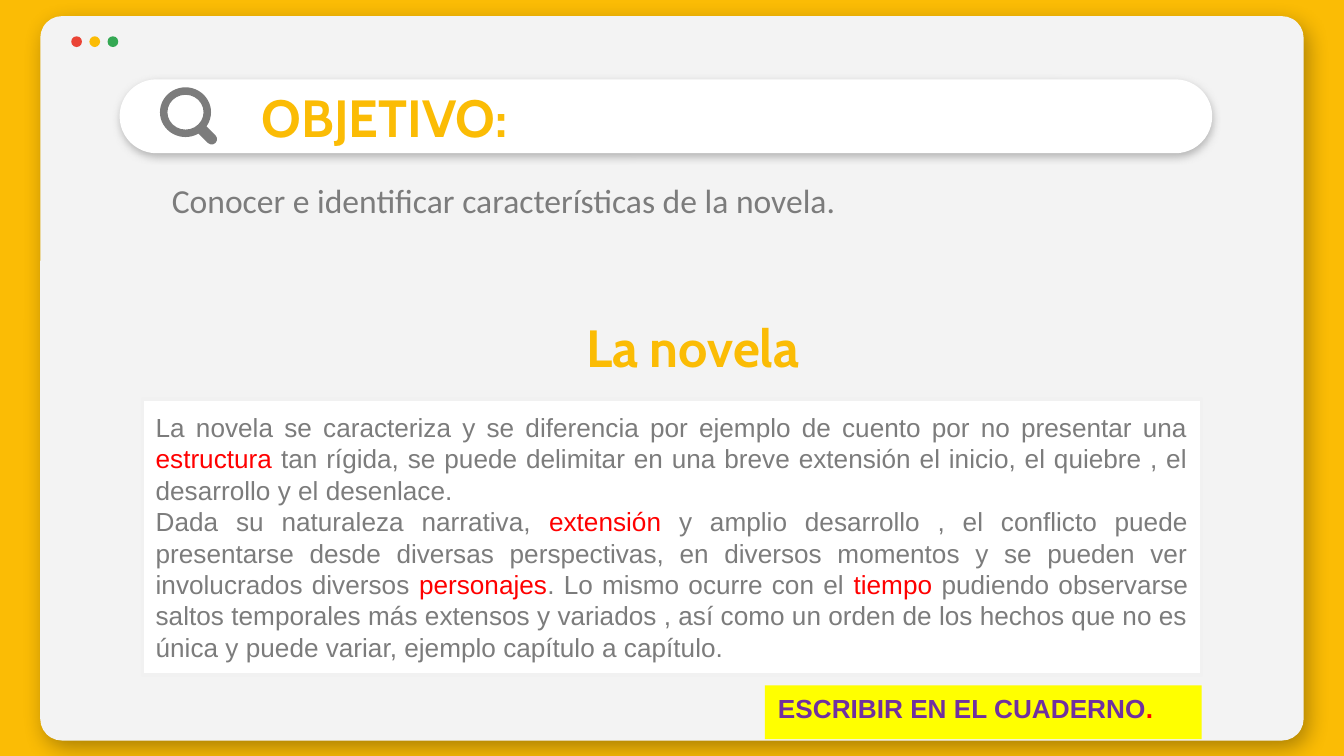
from typing import NamedTuple, Optional

from lxml import etree
from pptx import Presentation
from pptx.dml.color import RGBColor
from pptx.enum.shapes import MSO_SHAPE
from pptx.enum.text import MSO_ANCHOR, PP_ALIGN
from pptx.oxml.ns import qn
from pptx.util import Inches, Pt

RECT, ROUND = MSO_SHAPE.RECTANGLE, MSO_SHAPE.ROUNDED_RECTANGLE
OVAL, DONUT = MSO_SHAPE.OVAL, MSO_SHAPE.DONUT
TOP, MIDDLE = MSO_ANCHOR.TOP, MSO_ANCHOR.MIDDLE
LEFT, CENTER, JUSTIFY = PP_ALIGN.LEFT, PP_ALIGN.CENTER, PP_ALIGN.JUSTIFY

YELLOW, GRAY, WHITE, RED = "FBBC05", "7C7C7C", "FFFFFF", "FF0000"
HEADING = {"name": "Cabin", "size": Pt(28), "bold": True}
SUBTITLE = {"name": "Calibri", "size": Pt(18), "bold": False}
BODY = {"name": "Arial", "size": Pt(14), "bold": False}
LABEL = {**BODY, "bold": True}


class Box(NamedTuple):
    left: float
    top: float
    width: float
    height: float


class Shadow(NamedTuple):
    color: str
    alpha: int
    blur: float
    dist: float
    angle: int


class Run(NamedTuple):
    text: str
    color: str = GRAY


def rgb(color: str) -> RGBColor:
    return RGBColor.from_string(color)


def add_shadow(sp, shadow: Shadow) -> None:
    effects = sp._element.spPr.find(qn("a:effectLst"))
    outer = etree.SubElement(
        effects, qn("a:outerShdw"), blurRad=str(Pt(shadow.blur)),
        dist=str(Pt(shadow.dist)), dir=str(shadow.angle * 60000),
        algn="bl", rotWithShape="0")
    clr = etree.SubElement(outer, qn("a:srgbClr"), val=shadow.color)
    etree.SubElement(clr, qn("a:alpha"), val=str(shadow.alpha * 1000))


def add_shape(s, kind, box: Box, fill: str, adjust: Optional[float] = None,
              shadow: Optional[Shadow] = None):
    sp = s.shapes.add_shape(kind, *map(Inches, box))
    sp.fill.solid()
    sp.fill.fore_color.rgb = rgb(fill)
    sp.line.fill.background()
    sp.shadow.inherit = False
    if adjust is not None:
        sp.adjustments[0] = adjust
    if shadow:
        add_shadow(sp, shadow)
    return sp


def add_text(sp, paragraphs: list[list[Run]], font: dict, align=LEFT,
             anchor=MIDDLE, inset: float = 0.05) -> None:
    tf = sp.text_frame
    frame = {"word_wrap": True, "vertical_anchor": anchor,
             "margin_left": Inches(0.1), "margin_right": Inches(0.1),
             "margin_top": Inches(inset), "margin_bottom": Inches(inset)}
    for key, value in frame.items():
        setattr(tf, key, value)
    for i, runs in enumerate(paragraphs):
        p = tf.add_paragraph() if i else tf.paragraphs[0]
        p.alignment = align
        for run in runs:
            r = p.add_run()
            r.text = run.text
            for key, value in font.items():
                setattr(r.font, key, value)
            r.font.color.rgb = rgb(run.color)


def add_text_box(s, box: Box, run: Run, font: dict, align=LEFT,
                 anchor=MIDDLE) -> None:
    sp = s.shapes.add_textbox(*map(Inches, box))
    add_text(sp, [[run]], font, align, anchor, 0.1)


def add_window(s) -> None:
    add_shape(s, ROUND, Box(0.3, 0.12, 9.4, 5.39), "F3F3F3", 0.03,
              Shadow("000000", 32, 12.4, 5.2, 57))
    for i, color in enumerate(("EA4335", YELLOW, "34A853")):
        add_shape(s, OVAL, Box(0.53 + 0.135 * i, 0.27, 0.08, 0.08), color)


def add_search_bar(s) -> None:
    add_shape(s, ROUND, Box(0.89, 0.59, 8.13, 0.55), WHITE, 0.5,
              Shadow(GRAY, 50, 4.5, 1.5, 90))
    add_shape(s, DONUT, Box(1.19, 0.65, 0.38, 0.37), GRAY, 0.15)
    handle = add_shape(s, ROUND, Box(1.45, 0.96, 0.18, 0.08), GRAY, 0.5)
    handle.rotation = 45


NOVEL = [
    [Run("La novela se caracteriza y se diferencia por ejemplo de cuento "
         "por no presentar una "),
     Run("estructura", RED),
     Run(" tan rígida, se puede delimitar en una breve extensión el inicio, "
         "el quiebre , el desarrollo y el desenlace.")],
    [Run("Dada su naturaleza narrativa, "),
     Run("extensión", RED),
     Run(" y amplio desarrollo , el conflicto puede presentarse desde "
         "diversas perspectivas, en diversos momentos y se pueden ver "
         "involucrados diversos "),
     Run("personajes", RED),
     Run(". Lo mismo ocurre con el "),
     Run("tiempo", RED),
     Run(" pudiendo observarse saltos temporales más extensos y variados , "
         "así como un orden de los hechos que no es única y puede variar, "
         "ejemplo capítulo a capítulo.")],
]
REMINDER = [[Run("ESCRIBIR EN EL CUADERNO", "7030A0"), Run(".", RED)]]


def main() -> None:
    prs = Presentation()
    prs.slide_width = Inches(10)
    prs.slide_height = prs.slide_width * 9 // 16
    s = prs.slides.add_slide(prs.slide_layouts[6])
    s.background.fill.solid()
    s.background.fill.fore_color.rgb = rgb(YELLOW)

    add_window(s)
    add_search_bar(s)
    add_text_box(s, Box(1.85, 0.61, 7.09, 0.52), Run("OBJETIVO:", YELLOW),
                 HEADING)
    add_text_box(s, Box(1.18, 1.24, 8.42, 0.75),
                 Run("Conocer e identificar características de la novela."),
                 SUBTITLE, anchor=TOP)
    add_text_box(s, Box(3.11, 2.32, 4.09, 0.52), Run("La novela", YELLOW),
                 HEADING, CENTER)

    panel = add_shape(s, RECT, Box(1.06, 2.97, 7.88, 2.05), WHITE)
    panel.line.color.rgb = rgb("F1F1F1")
    panel.line.width = Pt(2)
    add_text(panel, NOVEL, BODY, JUSTIFY)

    label = add_shape(s, RECT, Box(5.69, 5.1, 3.25, 0.4), "FFFF00")
    add_text(label, REMINDER, LABEL, anchor=TOP)

    prs.save("out.pptx")


if __name__ == "__main__":
    main()
